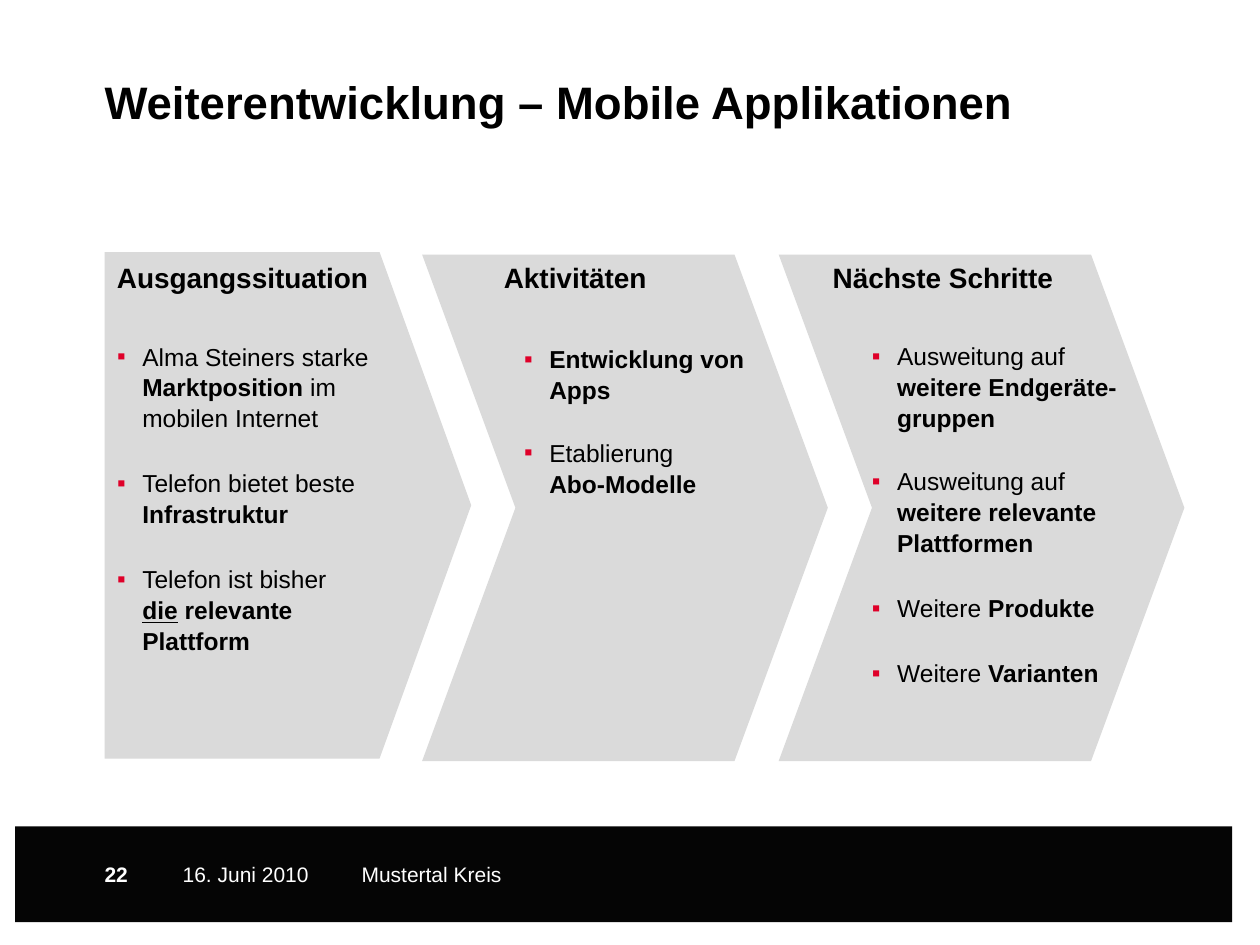
from dataclasses import dataclass

from lxml import etree
from pptx import Presentation
from pptx.dml.color import RGBColor
from pptx.enum.shapes import MSO_SHAPE
from pptx.enum.text import MSO_ANCHOR
from pptx.oxml.ns import qn
from pptx.util import Inches, Pt

RECT, PENTAGON, CHEVRON = MSO_SHAPE.RECTANGLE, MSO_SHAPE.PENTAGON, MSO_SHAPE.CHEVRON
TOP = MSO_ANCHOR.TOP
FONT = "Arial"
BLACK, WHITE, GREY, RED, BAR = "000000", "FFFFFF", "DADADA", "DF0029", "050505"
COLS, ROWS = 100, 75
WIDTH, HEIGHT = Inches(10), Inches(7.5)
INDENT = Inches(0.2)
NO_INSETS = (0, 0, 0, 0)
HEAD_INSETS = (0.1, 0.05, 0.1, 0.05)
LIST_INSETS = (0.03, 0.05, 0, 0.05)


@dataclass(frozen=True)
class Area:
    """Position and size in columns and rows of the slide grid."""
    col: float
    row: float
    cols: float
    rows: float

    def emu(self) -> tuple:
        """Return left, top, width and height in EMU."""
        return (int(self.col * WIDTH / COLS), int(self.row * HEIGHT / ROWS),
                int(self.cols * WIDTH / COLS), int(self.rows * HEIGHT / ROWS))


@dataclass(frozen=True)
class Span:
    """A piece of text in one style."""
    text: str
    bold: bool = False
    underline: bool = False


@dataclass(frozen=True)
class Item:
    """A bullet point and the gap below it in points."""
    spans: tuple
    gap: float = 19.6


@dataclass(frozen=True)
class Stage:
    """An arrow panel with a heading and a bullet list."""
    kind: int
    panel: Area
    tip: float
    title: str
    title_area: Area
    list_area: Area
    items: tuple


STAGES = (
    Stage(PENTAGON, Area(8.3, 20, 29.1, 40.2), 0.25,
          "Ausgangssituation", Area(8.3, 20.2, 22, 3.7), Area(9, 26.5, 26, 25.5), (
              Item((Span("Alma Steiners starke "), Span("Marktposition", True),
                    Span(" im \nmobilen Internet"))),
              Item((Span("Telefon bietet beste "), Span("Infrastruktur", True))),
              Item((Span("Telefon ist bisher \n"), Span("die", True, True),
                    Span(" relevante \nPlattform", True))))),
    Stage(CHEVRON, Area(33.5, 20.2, 32.2, 40.2), 0.23,
          "Aktivitäten", Area(39, 20.2, 13.5, 3.7), Area(41.3, 26.7, 19.7, 18), (
              Item((Span("Entwicklung von Apps", True),), 18.3),
              Item((Span("Etablierung \n"), Span("Abo-Modelle", True))))),
    Stage(CHEVRON, Area(61.8, 20.2, 32.2, 40.2), 0.23,
          "Nächste Schritte", Area(65.1, 20.2, 19.5, 3.7), Area(68.9, 26.5, 20.5, 35.6), (
              Item((Span("Ausweitung auf "), Span("weitere Endgeräte-gruppen", True)), 18.3),
              Item((Span("Ausweitung auf "), Span("weitere relevante Plattformen", True))),
              Item((Span("Weitere "), Span("Produkte", True))),
              Item((Span("Weitere "), Span("Varianten", True))))),
)

FOOTER = (
    (Span("22", True), Area(8.3, 68.4, 5.9, 3.1)),
    (Span("16. Juni 2010"), Area(14.5, 68.4, 14.2, 3.1)),
    (Span("Mustertal Kreis"), Area(28.7, 68.4, 44.1, 3.1)),
)


def rgb(color: str) -> RGBColor:
    """Turn a hex string into a colour."""
    return RGBColor.from_string(color)


def add_panel(s, kind: int, area: Area, color: str):
    """Draw a filled shape without line or shadow."""
    sp = s.shapes.add_shape(kind, *area.emu())
    sp.shadow.inherit = False
    sp.fill.solid()
    sp.fill.fore_color.rgb = rgb(color)
    sp.line.fill.background()
    return sp


def add_box(s, area: Area, insets: tuple, wrap: bool = True):
    """Add an empty text box and return its text frame."""
    tf = s.shapes.add_textbox(*area.emu()).text_frame
    tf.word_wrap = wrap
    tf.vertical_anchor = TOP
    tf.margin_left, tf.margin_top, tf.margin_right, tf.margin_bottom = map(Inches, insets)
    return tf


def add_span(p, span: Span, size: float, color: str) -> None:
    """Add one styled span, with a line break at each newline."""
    for i, text in enumerate(span.text.split("\n")):
        if i:
            p.add_line_break()
        if text:
            r = p.add_run()
            r.text = text
            r.font.name, r.font.size = FONT, Pt(size)
            r.font.bold, r.font.underline = span.bold, span.underline
            r.font.color.rgb = rgb(color)


def add_label(s, area: Area, span: Span, size: float, color: str,
              insets: tuple = NO_INSETS, wrap: bool = True) -> None:
    """Add a text box with a single line."""
    add_span(add_box(s, area, insets, wrap).paragraphs[0], span, size, color)


def set_bullet(p) -> None:
    """Give a paragraph a red square bullet, hanging indent and tab stop."""
    ppr = p._p.get_or_add_pPr()
    ppr.set("marL", str(INDENT))
    ppr.set("indent", str(-INDENT))
    clr = etree.SubElement(ppr, qn("a:buClr"))
    etree.SubElement(clr, qn("a:srgbClr"), val=RED)
    etree.SubElement(ppr, qn("a:buFont"), typeface=FONT)
    etree.SubElement(ppr, qn("a:buChar"), char="▪")
    tabs = etree.SubElement(ppr, qn("a:tabLst"))
    etree.SubElement(tabs, qn("a:tab"), pos=str(INDENT), algn="l")


def add_list(s, area: Area, items: tuple) -> None:
    """Add a bullet list."""
    tf = add_box(s, area, LIST_INSETS)
    for i, item in enumerate(items):
        p = tf.add_paragraph() if i else tf.paragraphs[0]
        set_bullet(p)
        p.line_spacing = 1.05
        p.space_after = Pt(item.gap if item is not items[-1] else 0)
        for span in item.spans:
            add_span(p, span, 14, BLACK)


def add_stage(s, stage: Stage) -> None:
    """Draw one stage of the process."""
    sp = add_panel(s, stage.kind, stage.panel, GREY)
    sp.adjustments[0] = stage.tip
    add_label(s, stage.title_area, Span(stage.title, True), 16, BLACK, HEAD_INSETS, False)
    add_list(s, stage.list_area, stage.items)


def main() -> None:
    """Build and save the slide."""
    prs = Presentation()
    prs.slide_width, prs.slide_height = WIDTH, HEIGHT
    s = prs.slides.add_slide(prs.slide_layouts[6])
    add_panel(s, RECT, Area(1.2, 65.6, 96.6, 7.6), BAR)
    add_label(s, Area(8.3, 5.9, 84.7, 8.9),
              Span("Weiterentwicklung – Mobile Applikationen", True), 26, BLACK)
    for stage in STAGES:
        add_stage(s, stage)
    for span, area in FOOTER:
        add_label(s, area, span, 12, WHITE)
    prs.save("out.pptx")


if __name__ == "__main__":
    main()
